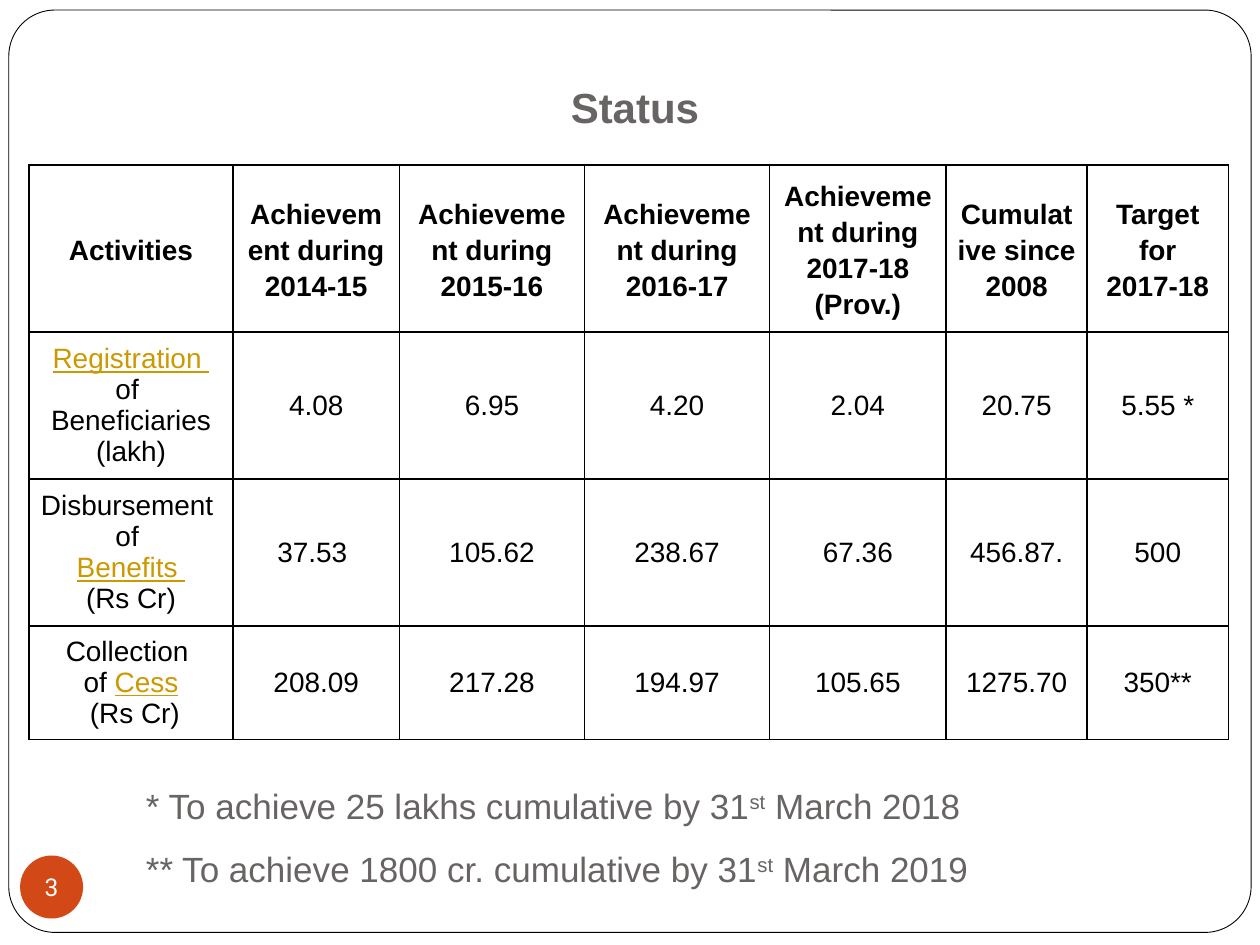
from dataclasses import dataclass

from lxml import etree
from pptx import Presentation
from pptx.dml.color import RGBColor
from pptx.enum import shapes, text
from pptx.oxml import ns
from pptx.util import Inches, Pt

BLACK = "000000"
WHITE = "FFFFFF"
GREY = "696464"
GOLD = "CC9900"
ORANGE = "D34817"


@dataclass
class Style:
    size: float
    color: str = BLACK
    bold: bool = False
    spacing: float = 1.0
    align: text.PP_ALIGN = text.PP_ALIGN.CENTER
    font: str = "Arial"


@dataclass
class Span:
    words: str
    linked: bool = False
    raised: bool = False


HEADER = Style(16, bold=True, spacing=1.15)
BODY = Style(16)
TITLE = Style(24, GREY, bold=True)
NOTE = Style(20, GREY, spacing=1.5, align=text.PP_ALIGN.LEFT)
NUMBER = Style(14, WHITE, font="Roboto")

COLUMN_WIDTHS = [1.62, 1.32, 1.47, 1.47, 1.4, 1.12, 1.12]
ROW_HEIGHTS = [1.23, 1.08, 1.08, 0.83]
HEADINGS = [
    ["Activities"],
    *[["Achievement during", year] for year in ("2014-15", "2015-16", "2016-17")],
    ["Achievement during", "2017-18", "(Prov.)"],
    ["Cumulative since 2008"],
    ["Target for", "2017-18"],
]
ACTIVITIES = [
    [[Span("Registration ", linked=True)], "of ", "Beneficiaries (lakh)"],
    ["Disbursement ", "of ", [Span("Benefits ", linked=True)], "(Rs Cr)"],
    ["Collection ", [Span("of "), Span("Cess", linked=True)], " (Rs Cr)"],
]
FIGURES = [
    ["4.08", "6.95", "4.20", "2.04", "20.75", "5.55 *"],
    ["37.53 ", "105.62", "238.67", "67.36", "456.87.", "500"],
    ["208.09", "217.28", "194.97", "105.65", "1275.70", "350**"],
]
NOTES = [
    [Span("* To achieve 25 lakhs cumulative by 31"), Span("st", raised=True),
     Span(" March 2018"), Span("\n"),
     Span("** To achieve 1800 cr. cumulative by 31"), Span("st", raised=True),
     Span(" March 2019")],
]


def rgb(color: str) -> RGBColor:
    return RGBColor.from_string(color)


def write(frame, lines: list, style: Style) -> None:
    for index, line in enumerate(lines):
        paragraph = frame.add_paragraph() if index else frame.paragraphs[0]
        paragraph.alignment = style.align
        paragraph.line_spacing = style.spacing
        for span in [Span(line)] if isinstance(line, str) else line:
            if span.words == "\n":
                paragraph.add_line_break()
                continue
            run = paragraph.add_run()
            run.text = span.words
            run.font.name = style.font
            run.font.size = Pt(style.size)
            run.font.bold = style.bold
            run.font.underline = span.linked
            run.font.color.rgb = rgb(GOLD if span.linked else style.color)
            if span.raised:
                run.font._element.set("baseline", "30000")


def add_text(slide, box: tuple, lines: list, style: Style) -> None:
    shape = slide.shapes.add_textbox(*map(Inches, box))
    frame = shape.text_frame
    frame.word_wrap = True
    frame.vertical_anchor = text.MSO_ANCHOR.BOTTOM
    frame.margin_bottom = Inches(0.1)
    write(frame, lines, style)


def add_shape(slide, kind, box: tuple, fill: str):
    shape = slide.shapes.add_shape(kind, *map(Inches, box))
    shape.shadow.inherit = False
    shape.fill.solid()
    shape.fill.fore_color.rgb = rgb(fill)
    shape.line.fill.background()
    return shape


def add_borders(cell) -> None:
    properties = cell._tc.get_or_add_tcPr()
    for index, side in enumerate(("a:lnL", "a:lnR", "a:lnT", "a:lnB")):
        line = etree.Element(ns.qn(side), w=str(Pt(1)))
        fill = etree.SubElement(line, ns.qn("a:solidFill"))
        etree.SubElement(fill, ns.qn("a:srgbClr"), val=BLACK)
        properties.insert(index, line)


def add_status_table(slide) -> None:
    rows = [HEADINGS]
    for activity, figures in zip(ACTIVITIES, FIGURES):
        rows.append([activity, *[[figure] for figure in figures]])
    table = slide.shapes.add_table(
        len(rows), len(COLUMN_WIDTHS), Inches(0.23), Inches(1.31),
        Inches(sum(COLUMN_WIDTHS)), Inches(sum(ROW_HEIGHTS)),
    ).table
    table.first_row = table.horz_banding = False
    for column, width in zip(table.columns, COLUMN_WIDTHS):
        column.width = Inches(width)
    for row_index, lines_by_cell in enumerate(rows):
        table.rows[row_index].height = Inches(ROW_HEIGHTS[row_index])
        for column_index, lines in enumerate(lines_by_cell):
            cell = table.cell(row_index, column_index)
            cell.fill.background()
            cell.vertical_anchor = text.MSO_ANCHOR.MIDDLE
            cell.margin_left = cell.margin_right = Inches(0.09)
            add_borders(cell)
            write(cell.text_frame, lines, BODY if row_index else HEADER)


def main() -> None:
    presentation = Presentation()
    presentation.slide_width = Inches(10)
    presentation.slide_height = Inches(7.5)
    slide = presentation.slides.add_slide(presentation.slide_layouts[6])

    border = add_shape(slide, shapes.MSO_SHAPE.ROUNDED_RECTANGLE,
                       (0.07, 0.08, 9.86, 7.32), WHITE)
    border.adjustments[0] = 0.05
    border.line.color.rgb = rgb(BLACK)
    border.line.width = Pt(0.5)

    add_text(slide, (1.06, 6.14, 8.67, 1.02), NOTES, NOTE)

    badge = add_shape(slide, shapes.MSO_SHAPE.OVAL, (0.16, 6.79, 0.5, 0.5), ORANGE)
    frame = badge.text_frame
    frame.word_wrap = False
    frame.vertical_anchor = text.MSO_ANCHOR.MIDDLE
    frame.margin_left = frame.margin_right = frame.margin_top = frame.margin_bottom = 0
    write(frame, ["3"], NUMBER)

    add_status_table(slide)
    add_text(slide, (0.51, 0.44, 9.06, 0.71), ["Status"], TITLE)
    presentation.save("out.pptx")


if __name__ == "__main__":
    main()
